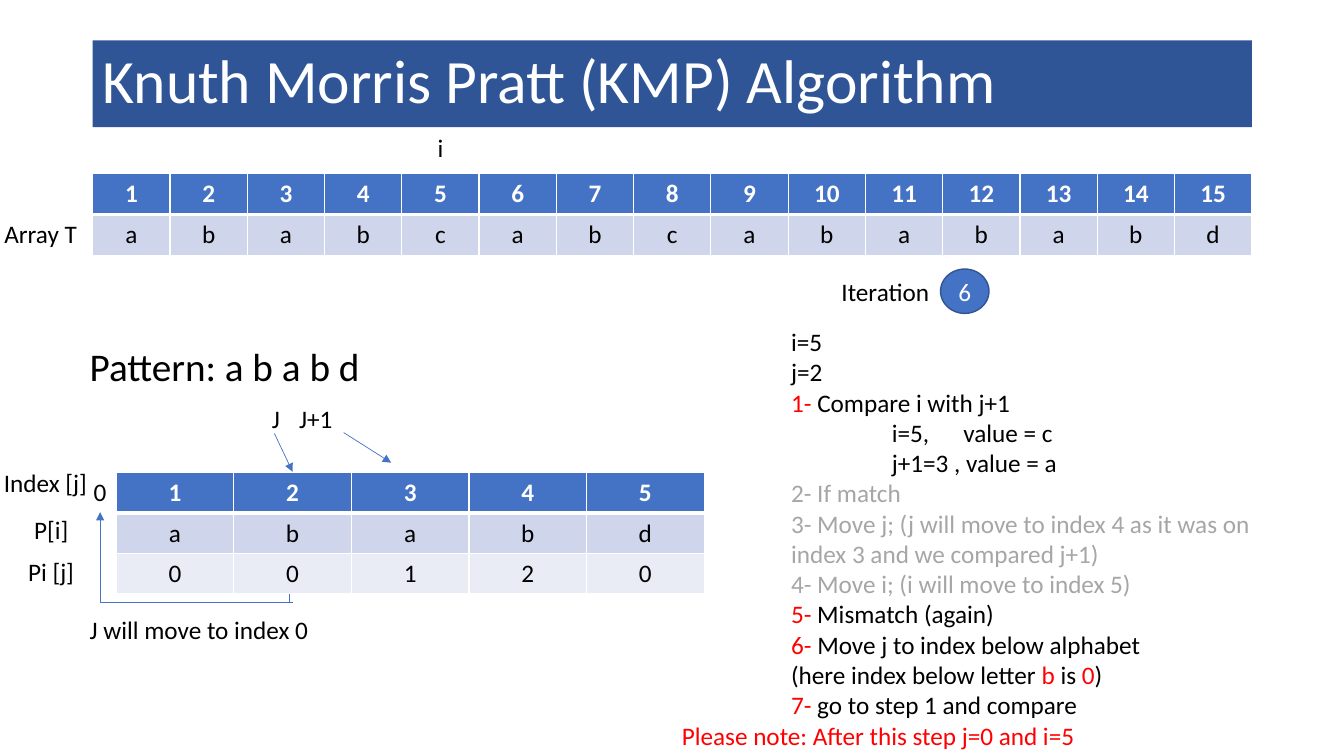
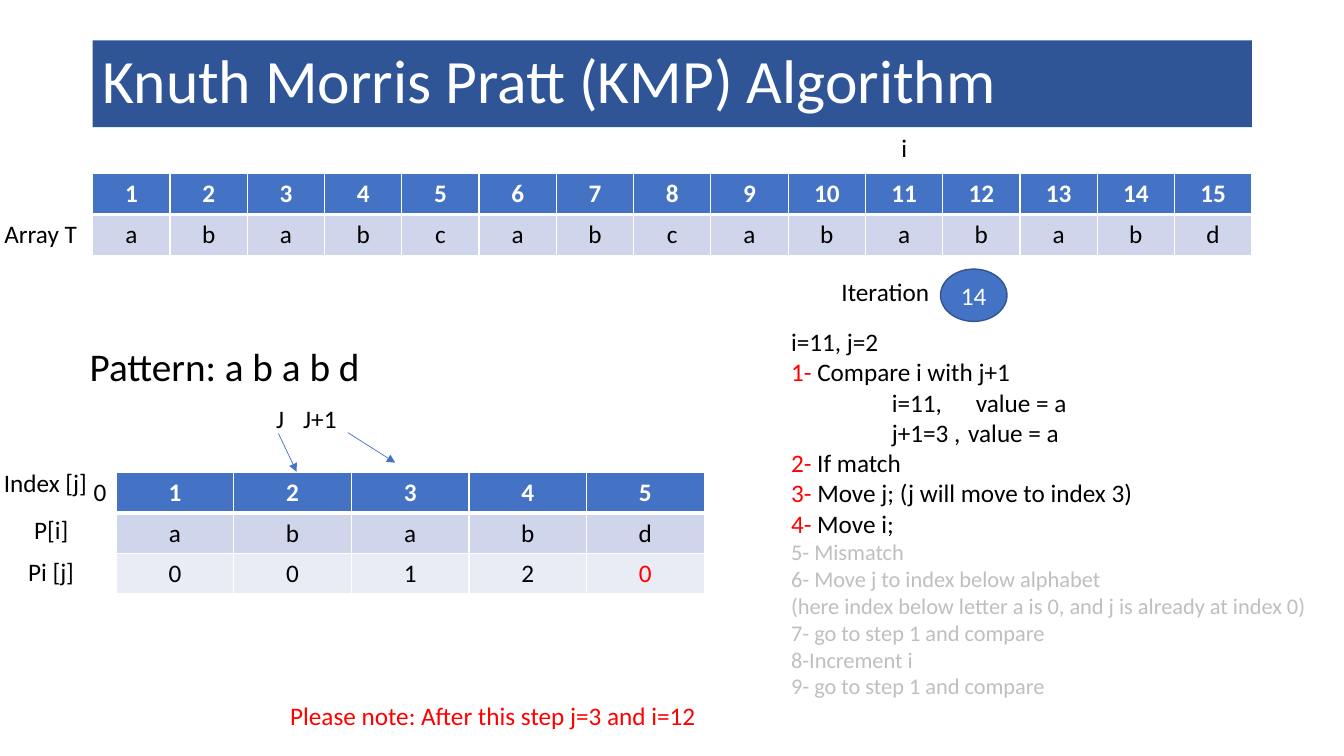
"""Build two slides that trace steps of the KMP string search."""
from typing import NamedTuple

from lxml.etree import SubElement
from pptx import Presentation
from pptx.dml.color import RGBColor
from pptx.enum.shapes import MSO_CONNECTOR as Wire, MSO_SHAPE as Preset
from pptx.enum.text import MSO_ANCHOR as Anchor, MSO_AUTO_SIZE as AutoSize, PP_ALIGN as Align
from pptx.oxml.ns import qn
from pptx.util import Pt

BLACK = RGBColor(0x00, 0x00, 0x00)
WHITE = RGBColor(0xFF, 0xFF, 0xFF)
RED = RGBColor(0xFF, 0x00, 0x00)
GREY = RGBColor(0xA6, 0xA6, 0xA6)
PALE_GREY = RGBColor(0xBF, 0xBF, 0xBF)
NAVY = RGBColor(0x2F, 0x55, 0x97)
BLUE = RGBColor(0x44, 0x72, 0xC4)
OUTLINE = RGBColor(0x32, 0x54, 0x91)
BANDS = [BLUE, RGBColor(0xCF, 0xD5, 0xEA), RGBColor(0xE9, 0xEB, 0xF5)]

FONT = "Calibri"
TABLE_LEFT, ARRAY_COLUMN, PATTERN_COLUMN, ROW = 66.24, 55.2, 84, 28.9
LABEL_HEIGHT = 29
ARRAY = "ababcabcabababd"
PATTERN = "ababd"
FAILURE = "00120"


class Line(NamedTuple):
    """One paragraph; parts between asterisks are red."""
    text: str
    color: RGBColor = BLACK
    size: int = 18
    tabs: tuple = ()


class Board:
    """Holds the style and the current slide."""

    def __init__(self):
        self.deck = Presentation()
        self.deck.slide_width, self.deck.slide_height = Pt(960), Pt(540)
        self.slide = None

    def new_slide(self):
        self.slide = self.deck.slides.add_slide(self.deck.slide_layouts[6])

    def set_line(self, para, line, align=Align.LEFT, bold=False):
        para.alignment = align
        if line.tabs:
            tab_list = SubElement(para._p.get_or_add_pPr(), qn("a:tabLst"))
            for stop in line.tabs:
                SubElement(tab_list, qn("a:tab"), pos=str(Pt(stop)), algn="l")
        font = para.font
        font.name, font.size, font.bold = FONT, Pt(line.size), bold
        font.color.rgb = line.color
        for index, part in enumerate(line.text.split("*")):
            if part:
                span = para.add_run()
                span.text = part
                if index % 2:
                    span.font.color.rgb = RED

    def text(self, left, top, width, height, *lines, wrap=False, align=Align.LEFT):
        box = self.slide.shapes.add_textbox(Pt(left), Pt(top), Pt(width), Pt(height))
        frame = box.text_frame
        frame.word_wrap = wrap
        frame.auto_size = AutoSize.SHAPE_TO_FIT_TEXT
        for index, line in enumerate(lines):
            para = frame.add_paragraph() if index else frame.paragraphs[0]
            self.set_line(para, line, align)

    def label(self, left, top, width, text, color=BLACK):
        self.text(left, top, width, LABEL_HEIGHT, Line(text, color))

    def shape(self, preset, left, top, width, height, fill, line, outline=None, align=Align.LEFT):
        shape = self.slide.shapes.add_shape(preset, Pt(left), Pt(top), Pt(width), Pt(height))
        shape.shadow.inherit = False
        shape.fill.solid()
        shape.fill.fore_color.rgb = fill
        if outline:
            shape.line.color.rgb, shape.line.width = outline, Pt(1)
        else:
            shape.line.fill.background()
        shape.text_frame.vertical_anchor = Anchor.MIDDLE
        para = shape.text_frame.paragraphs[0]
        self.set_line(para, line, align)
        return para

    def title(self, text):
        para = self.shape(Preset.RECTANGLE, TABLE_LEFT, 28.8, 828, 62, NAVY, Line(text, WHITE, 44))
        para.line_spacing = 0.9

    def table(self, left, top, column, rows):
        count = len(rows[0])
        frame = self.slide.shapes.add_table(
            len(rows), count, Pt(left), Pt(top), Pt(column * count), Pt(ROW * len(rows)))
        grid = frame.table
        for grid_column in grid.columns:
            grid_column.width = Pt(column)
        for index, values in enumerate(rows):
            grid.rows[index].height = Pt(ROW)
            for cell, value in zip(grid.rows[index].cells, values):
                self.borders(cell, top=3 if index == 1 else 1, bottom=1 if index else 3)
                cell.fill.solid()
                cell.fill.fore_color.rgb = BANDS[index]
                line = Line(value, BLACK if index else WHITE)
                self.set_line(cell.text_frame.paragraphs[0], line, Align.CENTER, index == 0)

    def borders(self, cell, top, bottom):
        properties = cell._tc.get_or_add_tcPr()
        for side, width in (("L", 1), ("R", 1), ("T", top), ("B", bottom)):
            edge = SubElement(properties, qn("a:ln" + side), w=str(Pt(width)))
            SubElement(SubElement(edge, qn("a:solidFill")), qn("a:srgbClr"), val=str(WHITE))

    def connector(self, start, end, arrow=True, kind=Wire.STRAIGHT):
        wire = self.slide.shapes.add_connector(kind, *map(Pt, start + end))
        wire.line.color.rgb, wire.line.width = BLUE, Pt(0.5)
        if arrow:
            outline = wire.element.spPr.find(qn("a:ln"))
            SubElement(outline, qn("a:tailEnd"), type="triangle")
        SubElement(wire.element.spPr, qn("a:effectLst"))
        return wire

    def corner_arrow(self, start, end):
        wire = self.connector(end, start, kind=Wire.ELBOW)
        wire.element.spPr.find(qn("a:prstGeom")).set("prst", "bentConnector2")
        wire.rotation = 180

    def trace(self, position, iteration, badge_size, shift, failure, steps):
        self.new_slide()
        self.title("Knuth Morris Pratt (KMP) Algorithm")
        headings = [str(number + 1) for number in range(len(ARRAY))]
        self.table(TABLE_LEFT, 124, ARRAY_COLUMN, [headings, ARRAY])
        self.text(TABLE_LEFT + (position - 0.5) * ARRAY_COLUMN - 13, 90.7, 26, LABEL_HEIGHT,
                  Line("i"), wrap=True, align=Align.CENTER)
        self.text(57, 241, 210, 41, Line("Pattern: a b a b d", size=28))
        self.table(83, 337.7, PATTERN_COLUMN, [headings[:len(PATTERN)], PATTERN, failure])
        for left, top, width, text in (
            (-4, 152.6, 67, "Array T"), (-4.3, 330.5, 74, "Index [j]"),
            (17.3, 363.6, 39, "P[i]"), (13, 393.8, 47.5, "Pi [j]"), (59.8, 337, 24, "0"),
            (187.2 + shift, 284.4, 20, "J"), (206.6 + shift, 284.4, 39, "J+1"),
            (594, 193.7, 78, "Iteration"),
        ):
            self.label(left, top, width, text)
        self.connector((196 + shift, 309.6), (209 + shift, 337))
        self.connector((245.5 + shift, 309), (279.4 + shift, 330.5))
        self.shape(Preset.OVAL, 671.8, 192.2, *badge_size, BLUE, Line(iteration, WHITE),
                   OUTLINE, Align.CENTER)
        self.text(558, 229.7, 384.5, 291, *steps, wrap=True)


def main():
    board = Board()
    board.trace(5, "6", (34.6, 31.7), 0, FAILURE, [
        Line("i=5"),
        Line("j=2"),
        Line("*1- *Compare i with j+1"),
        Line("\ti=5,\tvalue = c", tabs=(72, 123)),
        Line("\tj+1=3 , value = a", tabs=(72,)),
        Line("2- If match", GREY),
        Line("3- Move j; (j will move to index 4 as it was on index 3 and we compared j+1)", GREY),
        Line("4- Move i; (i will move to index 5)", GREY),
        Line("*5-* Mismatch (again)"),
        Line("*6- *Move j to index below alphabet"),
        Line("(here index below letter *b* is *0*)"),
        Line("*7-* go to step 1 and compare"),
    ])
    board.label(480, 511.2, 307.5, "Please note: After this step j=0 and i=5", RED)
    board.corner_arrow((209, 430), (71.5, 365.8))
    board.connector((206.6, 424), (206.6, 430), arrow=False)
    board.label(57, 435, 173, "J will move to index 0")

    board.trace(11, "14", (47.5, 37.4), 2.9, [*FAILURE[:-1], "*0*"], [
        Line("i=11, j=2"),
        Line("*1- *Compare i with j+1"),
        Line("\ti=11,\tvalue = a", tabs=(72, 132)),
        Line("\tj+1=3 ,\tvalue = a", tabs=(72, 126.5)),
        Line("*2-* If match"),
        Line("*3- *Move j; (j will move to index 3)"),
        Line("*4-* Move i;"),
        *(Line(text, PALE_GREY, 16) for text in (
            "5- Mismatch",
            "6- Move j to index below alphabet",
            "(here index below letter a is 0, and j is already at index 0)",
            "7- go to step 1 and compare",
            "8-Increment i",
            "9- go to step 1 and compare",
        )),
    ])
    board.label(200.2, 496.8, 308, "Please note: After this step j=3 and i=12", RED)
    board.deck.save("out.pptx")


if __name__ == "__main__":
    main()
